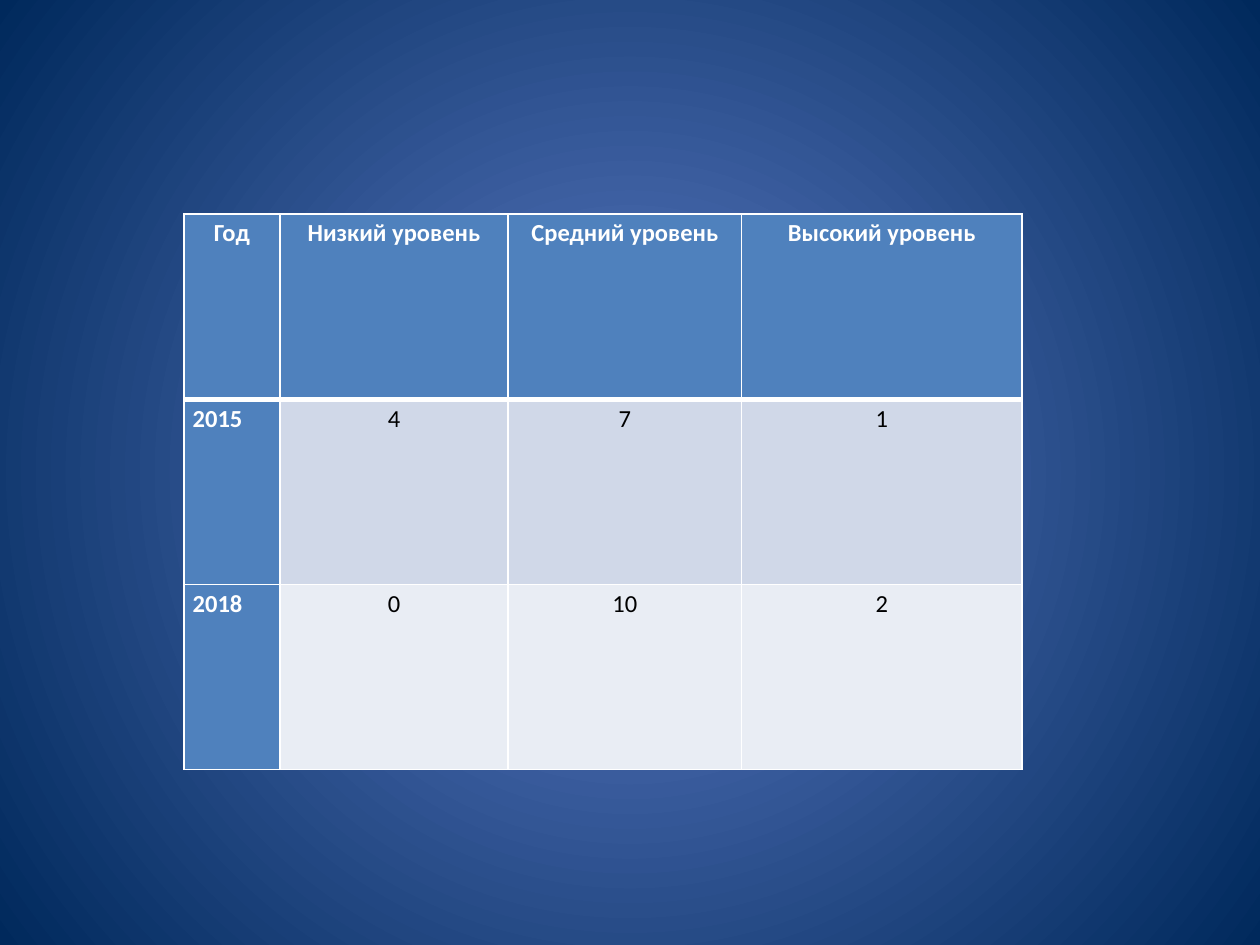
from lxml import etree
from pptx import Presentation
from pptx import util as u
from pptx.dml.color import RGBColor
from pptx.enum import text
from pptx.oxml import ns, parse_xml

WHITE, BLACK, BLUE = "FFFFFF", "000000", "4F81BD"
BAND_FILLS = ["D0D8E8", "E9EDF4"]
LEVELS = [
    ["Год", "Низкий уровень", "Средний уровень", "Высокий уровень"],
    ["2015", "4", "7", "1"],
    ["2018", "0", "10", "2"],
]
COLUMN_WIDTHS = [0.76, 1.81, 1.85, 2.22]


def color(hex_value):
    return RGBColor.from_string(hex_value)


def set_radial_background(slide, center, edge):
    fill = slide.background.fill
    fill.solid()
    fill.fore_color.rgb = color(edge)
    solid = slide.element.find(".//" + ns.qn("p:bgPr")).find(ns.qn("a:solidFill"))
    solid.getparent().replace(solid, parse_xml(
        f'<a:gradFill {ns.nsdecls("a")} rotWithShape="1"><a:gsLst>'
        f'<a:gs pos="0"><a:srgbClr val="{center}"/></a:gs>'
        f'<a:gs pos="100000"><a:srgbClr val="{edge}"/></a:gs></a:gsLst>'
        '<a:path path="circle"><a:fillToRect l="50000" t="50000" r="50000" b="50000"/>'
        '</a:path></a:gradFill>'))


def set_borders(cell, widths):
    """Draw white borders; widths in points run left, right, top, bottom."""
    properties = cell._tc.get_or_add_tcPr()
    for position, (side, width) in enumerate(zip("LRTB", widths)):
        line = etree.Element(ns.qn(f"a:ln{side}"), w=str(u.Pt(width)))
        fill = etree.SubElement(line, ns.qn("a:solidFill"))
        etree.SubElement(fill, ns.qn("a:srgbClr"), val=WHITE)
        properties.insert(position, line)


def format_cell(cell, value, row, column):
    is_heading = row == 0 or column == 0
    cell.text = value
    cell.margin_left = cell.margin_right = u.Inches(0.07)
    cell.margin_top = cell.margin_bottom = 0
    cell.fill.solid()
    cell.fill.fore_color.rgb = color(BLUE if is_heading else BAND_FILLS[row - 1])
    set_borders(cell, [1, 1, 3 if row == 1 else 1, 3 if row == 0 else 1])

    paragraph = cell.text_frame.paragraphs[0]
    is_year = row > 0 and column == 0
    paragraph.alignment = text.PP_ALIGN.LEFT if is_year else text.PP_ALIGN.CENTER
    paragraph.line_spacing = 1.15
    paragraph.font.name = "Calibri"
    paragraph.font.size = u.Pt(14)
    paragraph.font.bold = is_heading
    paragraph.font.color.rgb = color(WHITE if is_heading else BLACK)


def add_level_table(slide, left, top, width, height):
    table = slide.shapes.add_table(
        len(LEVELS), len(COLUMN_WIDTHS), left, top, width, height).table
    for column, share in zip(table.columns, COLUMN_WIDTHS):
        column.width = int(width * share / sum(COLUMN_WIDTHS))
    for row, values in enumerate(LEVELS):
        table.rows[row].height = height // len(LEVELS)
        for column, value in enumerate(values):
            format_cell(table.cell(row, column), value, row, column)


def main():
    deck = Presentation()
    deck.slide_width, deck.slide_height = u.Inches(10), u.Inches(7.5)
    slide = deck.slides.add_slide(deck.slide_layouts[6])
    set_radial_background(slide, "5E7CC5", "00295C")
    add_level_table(slide, u.Inches(1.46), u.Inches(1.7), u.Inches(6.65), u.Inches(4.41))
    deck.save("out.pptx")


if __name__ == "__main__":
    main()
